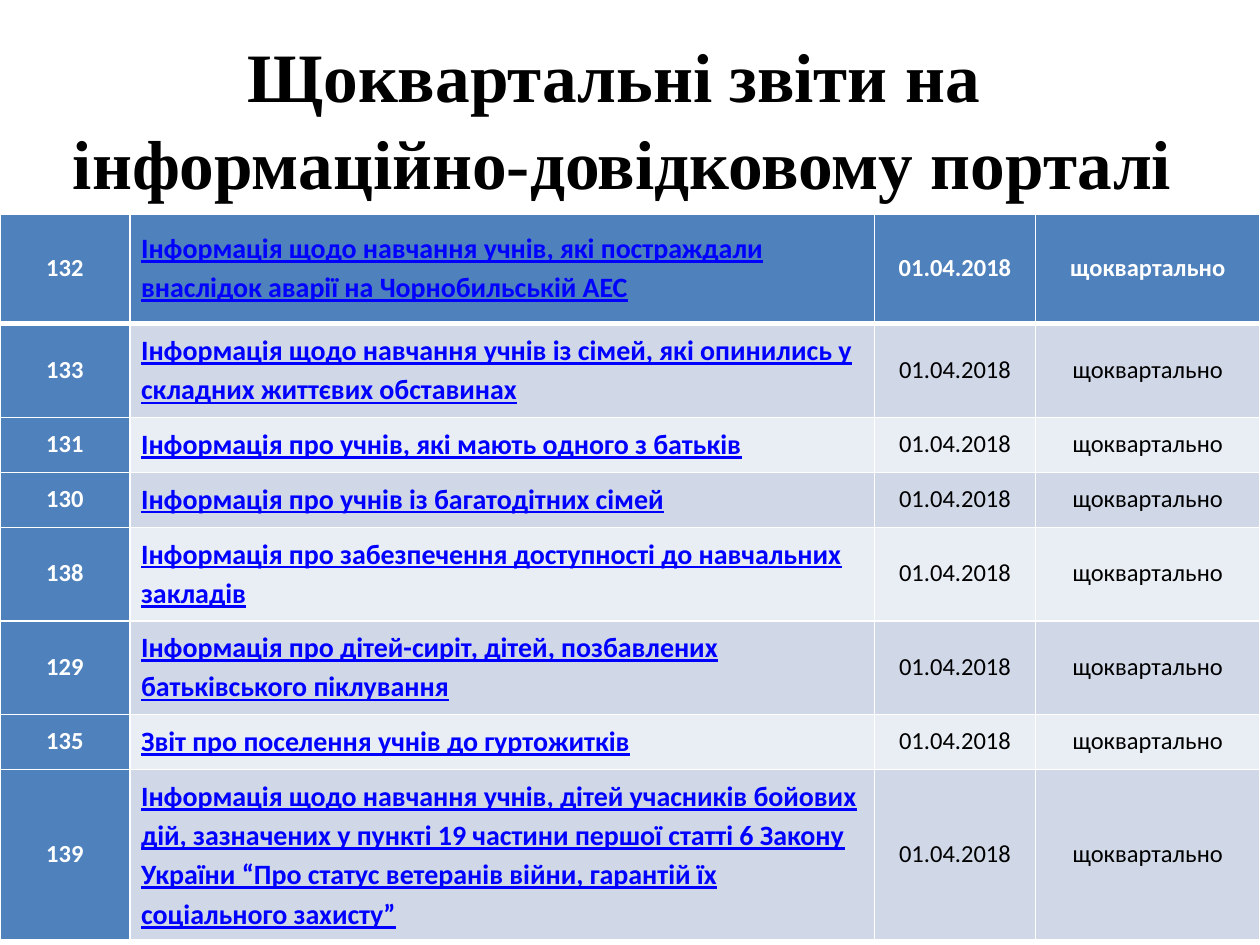
from lxml import etree
from pptx import Presentation
from pptx.dml.color import RGBColor
from pptx.enum.text import MSO_ANCHOR, PP_ALIGN
from pptx.oxml.ns import qn
from pptx.util import Inches, Pt

MIDDLE = MSO_ANCHOR.MIDDLE
CENTER, LEFT = PP_ALIGN.CENTER, PP_ALIGN.LEFT
COLORS = {"white": "FFFFFF", "black": "000000", "link": "0000FF",
          "accent": "4F81BD", "band_dark": "D0D8E8", "band_light": "E9EDF4"}


def add_run(paragraph, text, size, font, color, bold, underline=False):
    run = paragraph.add_run()
    run.text = text
    run.font.size = Pt(size)
    run.font.name = font
    run.font.color.rgb = RGBColor.from_string(COLORS[color])
    run.font.bold = bold
    run.font.underline = underline


def set_borders(cell, bottom_width):
    properties = cell._tc.get_or_add_tcPr()
    widths = {"a:lnL": 1, "a:lnR": 1, "a:lnT": 1, "a:lnB": bottom_width}
    for position, (side, width) in enumerate(widths.items()):
        line = etree.Element(qn(side), w=str(Pt(width)))
        fill = etree.SubElement(line, qn("a:solidFill"))
        etree.SubElement(fill, qn("a:srgbClr"), val=COLORS["white"])
        properties.insert(position, line)


presentation = Presentation()
presentation.slide_width = Inches(10)
presentation.slide_height = Inches(7.5)
slide = presentation.slides.add_slide(presentation.slide_layouts[6])

# Title
title = slide.shapes.add_textbox(Inches(0), Inches(0.3), Inches(9.88), Inches(1.25))
title.text_frame.word_wrap = True
title.text_frame.vertical_anchor = MIDDLE
heading = title.text_frame.paragraphs[0]
heading.alignment = CENTER
heading.line_spacing = 1.05
add_run(heading, "Щоквартальні звіти на ", 39.6, "Times New Roman", "black", True)
heading.add_line_break()
add_run(heading, "інформаційно-довідковому порталі", 39.6, "Times New Roman", "black", True)

# Reports: number, name, row height
REPORTS = [
    ("132", "Інформація щодо навчання учнів, які постраждали внаслідок аварії "
            "на Чорнобильській АЕС", 0.87),
    ("133", "Інформація щодо навчання учнів із сімей, які опинились у складних "
            "життєвих обставинах", 0.69),
    ("131", "Інформація про учнів, які мають одного з батьків", 0.41),
    ("130", "Інформація про учнів із багатодітних сімей", 0.41),
    ("138", "Інформація про забезпечення доступності до навчальних закладів", 0.67),
    ("129", "Інформація про дітей-сиріт, дітей, позбавлених батьківського "
            "піклування", 0.55),
    ("135", "Звіт про поселення учнів до гуртожитків", 0.41),
    ("139", "Інформація щодо навчання учнів, дітей учасників бойових дій, "
            "зазначених у пункті 19 частини першої статті 6 Закону України "
            "“Про статус ветеранів війни, гарантій їх соціального захисту”", 1.24),
]
DUE_DATE, FREQUENCY = "01.04.2018", "щоквартально"
COLUMN_WIDTHS = [1.03, 5.91, 1.28, 1.78]

# Report table
reports = slide.shapes.add_table(len(REPORTS), len(COLUMN_WIDTHS), Inches(0), Inches(1.7),
                                 Inches(10), Inches(5.25)).table
for column, width in zip(reports.columns, COLUMN_WIDTHS):
    column.width = Inches(width)

for row, (number, name, height) in enumerate(REPORTS):
    reports.rows[row].height = Inches(height)
    band = "band_dark" if row % 2 else "band_light"
    for column, text in enumerate([number, name, DUE_DATE, FREQUENCY]):
        is_header = row == 0 or column == 0
        is_name = column == 1
        cell = reports.cell(row, column)
        cell.vertical_anchor = MIDDLE
        cell.margin_left = cell.margin_right = cell.margin_bottom = Inches(0.09)
        cell.margin_top = Inches(0.04)
        cell.fill.solid()
        cell.fill.fore_color.rgb = RGBColor.from_string(COLORS["accent" if is_header else band])
        set_borders(cell, 3 if row == 0 else 1)

        paragraph = cell.text_frame.paragraphs[0]
        paragraph.alignment = LEFT if is_name else CENTER
        paragraph.line_spacing = 1.15
        if is_name:
            add_run(paragraph, text, 16, "Calibri", "link", True, True)
        else:
            add_run(paragraph, text, 14, "Calibri", "white" if is_header else "black", is_header)

presentation.save("out.pptx")
